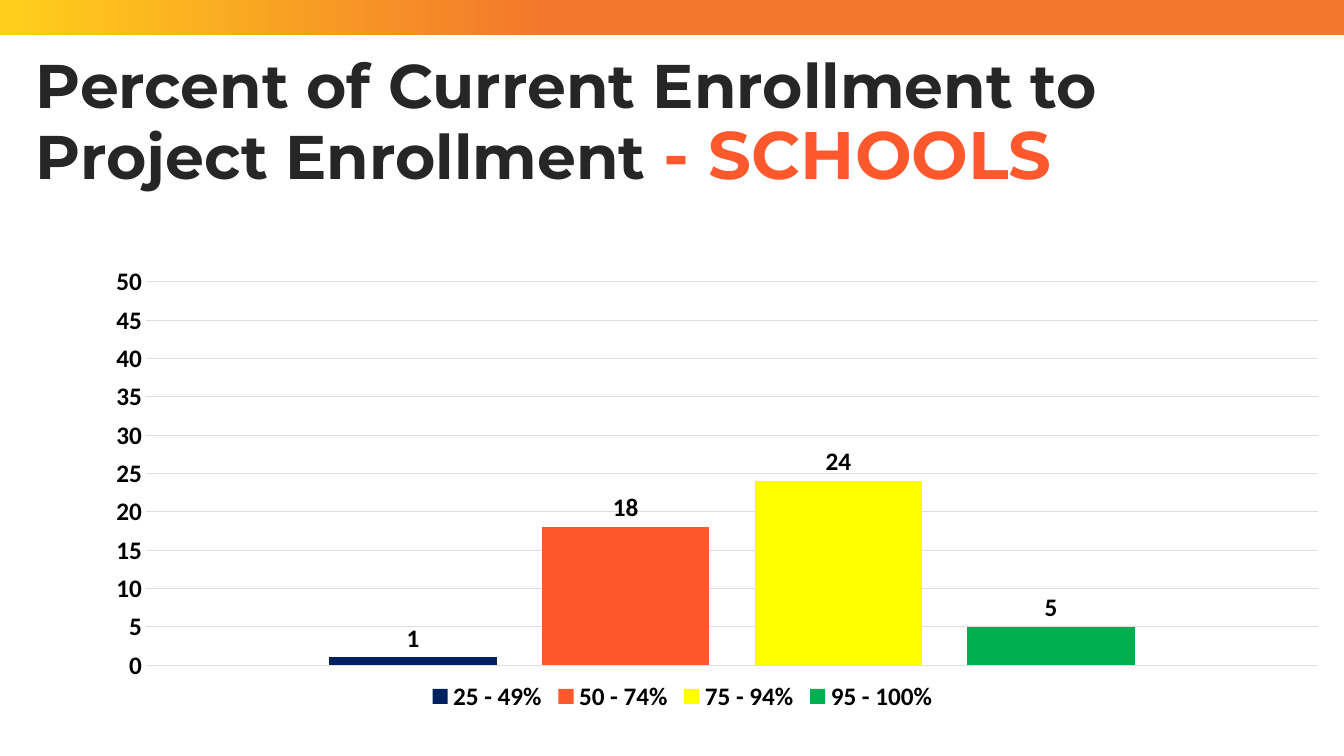
"""Build the slide comparing current enrollment with projected enrollment."""
from typing import NamedTuple

from lxml import etree
from pptx import Presentation
from pptx.chart.chart import Chart
from pptx.chart.data import CategoryChartData
from pptx.dml.color import RGBColor
from pptx.enum.chart import XL_CHART_TYPE, XL_LABEL_POSITION, XL_LEGEND_POSITION, XL_TICK_MARK
from pptx.enum.shapes import MSO_SHAPE
from pptx.enum.text import MSO_ANCHOR
from pptx.oxml.ns import qn
from pptx.slide import Slide
from pptx.util import Pt

COLUMNS = XL_CHART_TYPE.COLUMN_CLUSTERED
OUTSIDE_END = XL_LABEL_POSITION.OUTSIDE_END
BOTTOM = XL_LEGEND_POSITION.BOTTOM
NO_TICK = XL_TICK_MARK.NONE
RECTANGLE = MSO_SHAPE.RECTANGLE
MIDDLE = MSO_ANCHOR.MIDDLE

GOLD = RGBColor(0xFF, 0xD0, 0x1B)
AMBER = RGBColor(0xF3, 0x77, 0x2B)
CHARCOAL = RGBColor(0x26, 0x26, 0x26)
ORANGE = RGBColor(0xFF, 0x58, 0x2D)
NAVY = RGBColor(0x00, 0x20, 0x60)
YELLOW = RGBColor(0xFF, 0xFF, 0x00)
GREEN = RGBColor(0x00, 0xB0, 0x50)
BLACK = RGBColor(0x00, 0x00, 0x00)
WHITE = RGBColor(0xFF, 0xFF, 0xFF)
GRID_GRAY = RGBColor(0xDE, 0xDE, 0xDE)


class Band(NamedTuple):
    """A range of enrollment percentages and its number of schools."""
    name: str
    schools: int
    color: RGBColor


class TitleSpan(NamedTuple):
    """A piece of the title with its own size and color."""
    text: str
    size: int
    color: RGBColor


BANDS = [
    Band("25 - 49%", 1, NAVY),
    Band("50 - 74%", 18, ORANGE),
    Band("75 - 94%", 24, YELLOW),
    Band("95 - 100%", 5, GREEN),
]
TITLE = [
    TitleSpan("Percent of Current Enrollment to Project Enrollment ", 44, CHARCOAL),
    TitleSpan("- SCHOOLS", 48, ORANGE),
]
PLOT_LAYOUT = {"layoutTarget": "inner", "xMode": "edge", "yMode": "edge",
               "x": "0.078", "y": "0.156", "w": "0.922", "h": "0.744"}


def add_top_bar(page: Slide) -> None:
    """Draw the gradient bar along the top edge."""
    bar = page.shapes.add_shape(RECTANGLE, Pt(-4.3), Pt(-3.6), Pt(968.4), Pt(28.8))
    bar.shadow.inherit = False
    bar.line.fill.background()
    bar.fill.gradient()
    bar.fill.gradient_angle = 0
    for stop, (position, color) in zip(bar.fill.gradient_stops, [(0, GOLD), (0.41, AMBER)]):
        stop.position = position
        stop.color.rgb = color


def add_title(page: Slide) -> None:
    """Write the two-color title."""
    box = page.shapes.add_textbox(Pt(18.3), Pt(28), Pt(924), Pt(121.7))
    frame = box.text_frame
    frame.word_wrap = True
    frame.vertical_anchor = MIDDLE
    para = frame.paragraphs[0]
    para.line_spacing = 0.9
    para.font.name = "Montserrat"
    para.font.bold = True
    for piece in TITLE:
        span = para.add_run()
        span.text = piece.text
        span.font.size = Pt(piece.size)
        span.font.color.rgb = piece.color


def set_plot_layout(chart: Chart) -> None:
    """Fix the inner plot area as fractions of the chart."""
    plot_area = chart.element.find(".//" + qn("c:plotArea"))
    for old_layout in plot_area.findall(qn("c:layout")):
        plot_area.remove(old_layout)
    layout = etree.Element(qn("c:layout"))
    manual = etree.SubElement(layout, qn("c:manualLayout"))
    for name, value in PLOT_LAYOUT.items():
        etree.SubElement(manual, qn(f"c:{name}")).set("val", value)
    plot_area.insert(0, layout)


def fill_chart_area(chart: Chart, color: RGBColor) -> None:
    """Fill the chart background and remove its outline."""
    properties = etree.Element(qn("c:spPr"))
    fill = etree.SubElement(properties, qn("a:solidFill"))
    etree.SubElement(fill, qn("a:srgbClr")).set("val", str(color))
    line = etree.SubElement(properties, qn("a:ln"))
    etree.SubElement(line, qn("a:noFill"))
    chart.element.find(qn("c:chart")).addnext(properties)


def add_schools_chart(page: Slide) -> None:
    """Draw one column per enrollment band."""
    data = CategoryChartData()
    data.categories = ["1"]
    for band in BANDS:
        data.add_series(band.name, [band.schools])
    chart = page.shapes.add_chart(COLUMNS, Pt(33.3), Pt(144), Pt(908.6), Pt(368), data).chart
    chart.has_title = False
    chart.font.name = "Calibri"
    chart.font.size = Pt(18)
    chart.font.bold = True
    chart.font.color.rgb = BLACK

    chart.has_legend = True
    chart.legend.position = BOTTOM
    chart.legend.include_in_layout = False

    chart.category_axis.visible = False
    axis = chart.value_axis
    axis.minimum_scale = 0
    axis.maximum_scale = 50
    axis.major_unit = 5
    axis.major_tick_mark = NO_TICK
    axis.minor_tick_mark = NO_TICK
    axis.format.line.fill.background()
    axis.major_gridlines.format.line.color.rgb = GRID_GRAY
    axis.major_gridlines.format.line.width = Pt(0.75)

    plot = chart.plots[0]
    plot.gap_width = 219
    plot.overlap = -27
    plot.vary_by_categories = False
    plot.has_data_labels = True
    plot.data_labels.show_value = True
    plot.data_labels.position = OUTSIDE_END
    for series, band in zip(plot.series, BANDS):
        series.format.fill.solid()
        series.format.fill.fore_color.rgb = band.color
    set_plot_layout(chart)
    fill_chart_area(chart, WHITE)


def main() -> None:
    """Assemble and save the deck."""
    deck = Presentation()
    deck.slide_width = Pt(960)
    deck.slide_height = Pt(540)
    page = deck.slides.add_slide(deck.slide_layouts[6])
    add_top_bar(page)
    add_title(page)
    add_schools_chart(page)
    deck.save("out.pptx")


if __name__ == "__main__":
    main()
